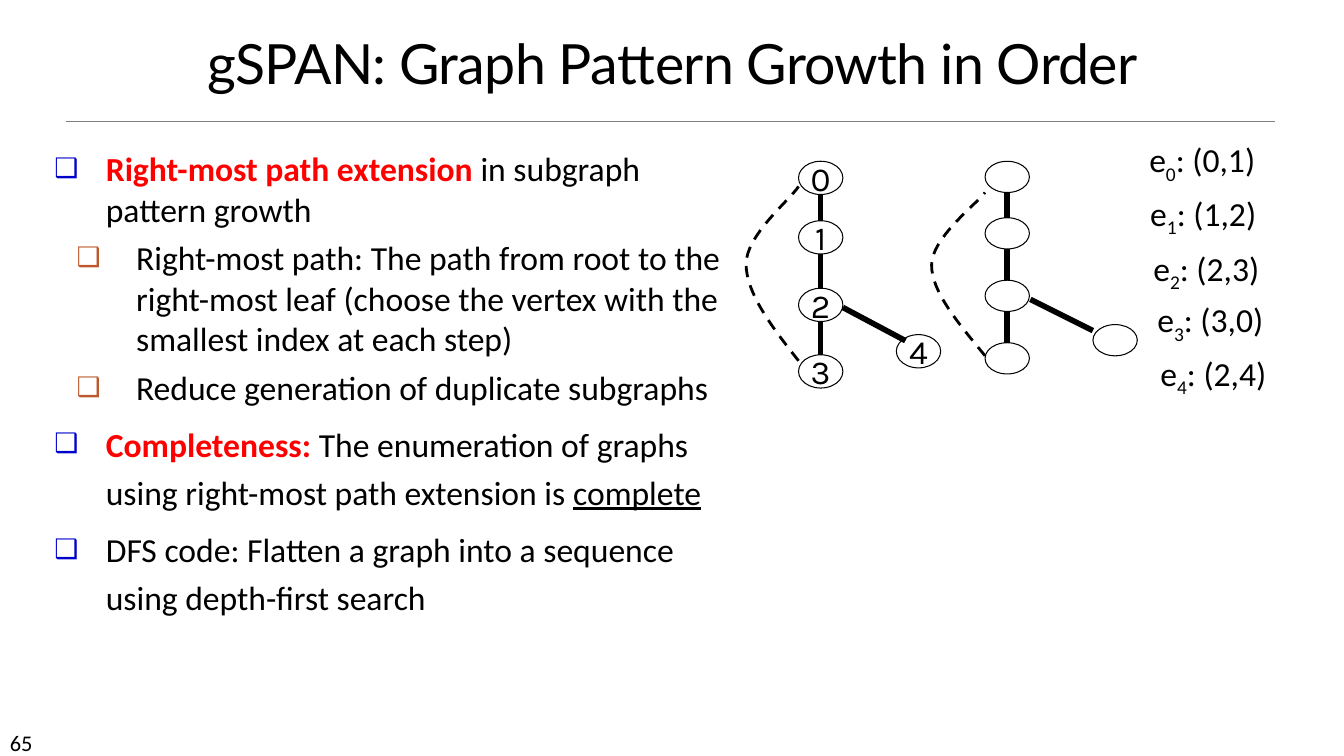
import dataclasses

import pptx
import pptx.dml.color
import pptx.enum.dml
import pptx.enum.shapes
import pptx.enum.text
import pptx.oxml
import pptx.oxml.ns
import pptx.util
from pptx.util import Inches

Align = pptx.enum.text.PP_ALIGN
Anchor = pptx.enum.text.MSO_ANCHOR
Fit = pptx.enum.text.MSO_AUTO_SIZE


@dataclasses.dataclass(frozen=True)
class Theme:
    ink: str = "000000"
    accent: str = "FF0000"
    rule: str = "808080"
    bullets: tuple = ("0000CC", "BD582C")
    head: str = "Lato"
    text: str = "Calibri"
    digit: str = "Karla"
    title: float = 39.6
    body: int = 24
    page: int = 16


THEME = Theme()
NODE_W = 0.44


def rgb(code):
    return pptx.dml.color.RGBColor.from_string(code)


def add_run(para, text, font=THEME.text, size=THEME.body, color=THEME.ink,
            bold=False, under=False):
    run = para.add_run()
    run.text = text
    run.font.name = font
    run.font.size = pptx.util.Pt(size)
    run.font.color.rgb = rgb(color)
    run.font.bold = bold
    run.font.underline = under
    return run


def add_box(shapes, left, top, width, height, wrap=True):
    box = shapes.add_textbox(Inches(left), Inches(top), Inches(width), Inches(height))
    box.text_frame.word_wrap = wrap
    return box.text_frame


def place(shape, left, top, width, height):
    shape.left, shape.top = Inches(left), Inches(top)
    shape.width, shape.height = Inches(width), Inches(height)
    shape.text_frame.auto_size = Fit.NONE
    return shape.text_frame


def set_line(shape, width, color=THEME.ink):
    shape.line.color.rgb = rgb(color)
    shape.line.width = pptx.util.Pt(width)


def add_line(shapes, start, end, width, color=THEME.ink):
    points = [Inches(v) for v in (*start, *end)]
    line = shapes.add_connector(pptx.enum.shapes.MSO_CONNECTOR.STRAIGHT, *points)
    set_line(line, width, color)
    line._element.spPr.append(pptx.oxml.parse_xml(
        f'<a:effectLst {pptx.oxml.ns.nsdecls("a")}/>'))
    return line


def add_node(shapes, left, top, height, label=""):
    node = shapes.add_shape(pptx.enum.shapes.MSO_SHAPE.OVAL, Inches(left),
                            Inches(top), Inches(NODE_W), Inches(height))
    node.shadow.inherit = False
    node.fill.background()
    set_line(node, 0.75)
    if label:
        frame = node.text_frame
        frame.word_wrap = False
        frame.vertical_anchor = Anchor.MIDDLE
        frame.paragraphs[0].alignment = Align.CENTER
        add_run(frame.paragraphs[0], label, THEME.digit)
    return node


def bezier(a, b, c, d, steps=16):
    for i in range(1, steps + 1):
        t = i / steps
        u = 1 - t
        yield tuple(Inches(u**3 * p + 3 * u * u * t * q + 3 * u * t * t * r + t**3 * s)
                    for p, q, r, s in zip(a, b, c, d))


def add_arc(shapes, start, c1, c2, mid, c3, c4, end):
    """Draw the dashed backward edge as two smooth bends."""
    build = shapes.build_freeform(Inches(start[0]), Inches(start[1]))
    build.add_line_segments([*bezier(start, c1, c2, mid), *bezier(mid, c3, c4, end)],
                            close=False)
    arc = build.convert_to_shape()
    arc.shadow.inherit = False
    arc.fill.background()
    set_line(arc, 2)
    arc.line.dash_style = pptx.enum.dml.MSO_LINE.DASH


def add_tree(shapes, left, tops, height, leaf, branch, arc, labels):
    """Draw a chain of nodes, a side leaf and a backward edge."""
    chain = [add_node(shapes, left, top, height, label)
             for top, label in zip(tops, labels)]
    add_node(shapes, *leaf, height, labels[-1])
    mid = left + NODE_W / 2
    for upper, lower, node in zip(tops, tops[1:], chain[1:]):
        edge = add_line(shapes, (mid, upper + height), (mid, lower), 4)
        edge.end_connect(node, 0)
    add_line(shapes, *branch, 4)
    add_arc(shapes, *arc)


def add_edge(shapes, left, top, index, pair):
    frame = add_box(shapes, left, top, 1.28, 0.5, wrap=False)
    frame.auto_size = Fit.SHAPE_TO_FIT_TEXT
    para = frame.paragraphs[0]
    add_run(para, "e")
    add_run(para, str(index)).font._element.set("baseline", "-25000")
    add_run(para, f": ({pair[0]},{pair[1]})")


def add_item(para, level, space, runs):
    para.level = level
    para.space_before = pptx.util.Pt(6)
    para.line_spacing = space
    props = para._p.get_or_add_pPr()
    margin, hang = ((0.51, 0.51), (0.81, 0.59))[level]
    props.set("marL", str(Inches(margin)))
    props.set("indent", str(-Inches(hang)))
    space_ns = pptx.oxml.ns.nsdecls("a")
    for part in (f'<a:buClr {space_ns}><a:srgbClr val="{THEME.bullets[level]}"/></a:buClr>',
                 f'<a:buSzPct {space_ns} val="80000"/>',
                 f'<a:buChar {space_ns} char="❑"/>'):
        props.append(pptx.oxml.parse_xml(part))
    for text, style in runs:
        add_run(para, text, **style)


def add_title(shape, text):
    frame = place(shape, 0.56, 0.33, 12.22, 0.67)
    frame.vertical_anchor = Anchor.BOTTOM
    para = frame.paragraphs[0]
    para.alignment = Align.CENTER
    para.line_spacing = 0.85
    run = add_run(para, text, THEME.head, THEME.title)
    run.font._element.set("spc", "-50")


def add_list(shape, items):
    frame = place(shape, 0.44, 1.42, 6.95, 5.58)
    frame.vertical_anchor = Anchor.TOP
    for i, item in enumerate(items):
        para = frame.add_paragraph() if i else frame.paragraphs[0]
        add_item(para, *item)


def main():
    deck = pptx.Presentation()
    deck.slide_width, deck.slide_height = Inches(13.33), Inches(7.5)
    slide = deck.slides.add_slide(deck.slide_layouts[1])
    shapes = slide.shapes

    # Frame of the slide
    add_line(shapes, (0.65, 1.2), (12.65, 1.2), 0.5, THEME.rule)
    page = add_box(shapes, 0, 7.18, 1.17, 0.3)
    add_run(page.paragraphs[0], "65", size=THEME.page)
    add_title(shapes.title, "gSPAN: Graph Pattern Growth in Order")

    # Main points
    key = {"color": THEME.accent, "bold": True}
    add_list(slide.placeholders[1], [
        (0, 1.0, [("Right-most path extension ", key),
                  ("in subgraph pattern growth", {})]),
        (1, 1.0, [("Right-most path: The path from root to the right-most leaf "
                   "(choose the vertex with the smallest index at each step)", {})]),
        (1, 1.0, [("Reduce generation of duplicate subgraphs", {})]),
        (0, 1.2, [("Completeness:", key),
                  (" The enumeration of graphs using right-most path extension is ", {}),
                  ("complete", {"under": True})]),
        (0, 1.2, [("DFS code: Flatten a graph into a sequence using "
                   "depth-first search", {})]),
    ])

    # Numbered graph
    add_tree(shapes.add_group_shape().shapes, 7.92, (1.6, 2.19, 2.86, 3.52), 0.33,
             (8.89, 3.32), ((8.36, 3.05), (8.98, 3.38)),
             ((7.92, 3.58), (7.66, 3.25), (7.4, 2.91), (7.4, 2.62),
              (7.4, 2.33), (7.84, 1.98), (7.92, 1.85)), "01234")

    # Plain graph with its edge codes
    group = shapes.add_group_shape().shapes
    add_tree(group, 9.77, (1.6, 2.16, 2.78, 3.4), 0.31,
             (10.84, 3.22), ((10.22, 2.97), (10.84, 3.28)),
             ((9.77, 3.53), (9.51, 3.21), (9.24, 2.9), (9.24, 2.63),
              (9.24, 2.36), (9.68, 2.03), (9.77, 1.91)), [""] * 5)
    spots = ((11.3, 1.33), (11.31, 1.86), (11.34, 2.41), (11.38, 2.92), (11.41, 3.45))
    pairs = ((0, 1), (1, 2), (2, 3), (3, 0), (2, 4))
    for i, (spot, pair) in enumerate(zip(spots, pairs)):
        add_edge(group, *spot, i, pair)

    deck.save("out.pptx")


if __name__ == "__main__":
    main()
